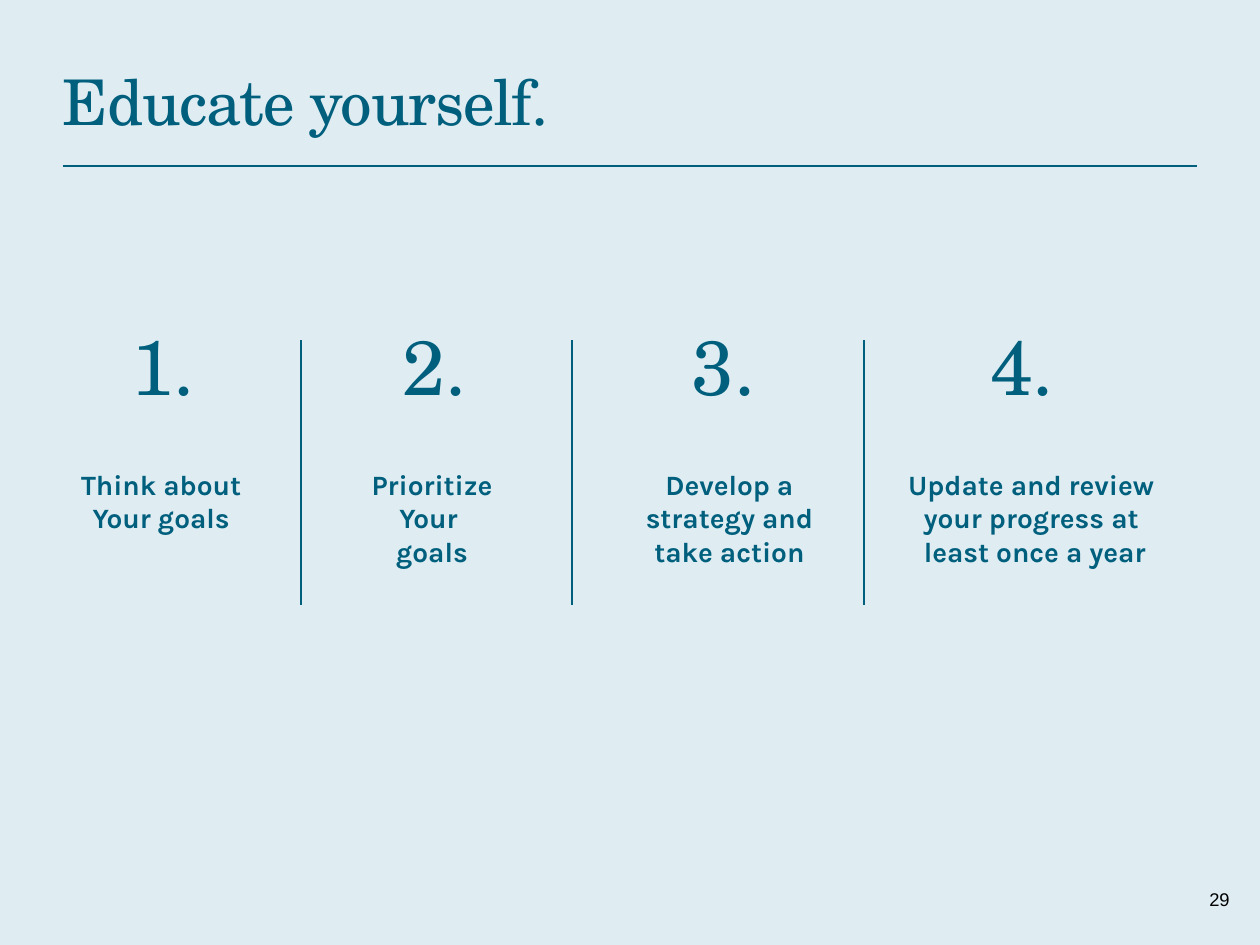
from lxml.etree import SubElement
from pptx import Presentation
from pptx.dml.color import RGBColor
from pptx.enum.shapes import MSO_CONNECTOR, MSO_SHAPE
from pptx.enum.text import MSO_ANCHOR, PP_ALIGN
from pptx.oxml.ns import qn
from pptx.util import Cm, Pt

TEAL = "005F7D"
SERIF, SANS = "TeX Gyre Schola", "Karla"
DEFAULT_INSETS = (0.25, 0.13, 0.25, 0.13)
CAPTION_INSETS = (0.25, 0, 0.25, 0.13)

# number, number left, caption left, caption width, caption paragraphs
# (a vertical tab is a line break inside a paragraph)
STEPS = [
    ("1.", 2.41, 1.27, 3.96, ["Think about", "Your goals"]),
    ("2.", 7.87, 6.73, 3.96, ["Prioritize", "Your ", "goals"]),
    ("3.", 13.69, 12.29, 4.83, ["Develop a strategy and take action"]),
    ("4.", 19.71, 17.15, 7.42,
     ["Update and review \vyour progress at \vleast once a year"]),
]
DIVIDERS = [6.07, 11.53, 17.42]


def rgb(color):
    return RGBColor.from_string(color)


def add_tint(s, width, height, color, alpha):
    sp = s.shapes.add_shape(MSO_SHAPE.RECTANGLE, 0, 0, width, height)
    sp.shadow.inherit = False
    sp.fill.solid()
    sp.fill.fore_color.rgb = rgb(color)
    sp.line.fill.background()
    clr = next(sp.fill._xPr.iter(qn("a:srgbClr")))
    SubElement(clr, qn("a:alpha")).set("val", str(alpha * 1000))


def add_text(s, box, lines, font, size, color=TEAL, bold=False,
             align=PP_ALIGN.LEFT, insets=DEFAULT_INSETS, spacing=None):
    tf = s.shapes.add_textbox(*map(Cm, box)).text_frame
    tf.word_wrap = True
    tf.vertical_anchor = MSO_ANCHOR.TOP
    tf.margin_left, tf.margin_top, tf.margin_right, tf.margin_bottom = map(Cm, insets)
    for i, line in enumerate(lines):
        p = tf.add_paragraph() if i else tf.paragraphs[0]
        p.alignment = align
        for j, part in enumerate(line.split("\v")):
            if j:
                p.add_line_break()
            r = p.add_run()
            r.text = part
            r.font.name = font
            r.font.size = Pt(size)
            r.font.bold = bold
            r.font.color.rgb = rgb(color)
            if spacing is not None:
                r._r.get_or_add_rPr().set("spc", str(round(spacing * 100)))


def add_line(s, x1, y1, x2, y2, width):
    cn = s.shapes.add_connector(MSO_CONNECTOR.STRAIGHT, *map(Cm, (x1, y1, x2, y2)))
    cn.line.color.rgb = rgb(TEAL)
    cn.line.width = Pt(width)
    SubElement(cn._element.spPr, qn("a:effectLst"))


def add_step(s, number, number_left, left, width, lines):
    add_text(s, (number_left, 6.3, 3.78, 2.13), [number], SERIF, 44)
    add_text(s, (left, 9.42, width, 2.18), lines, SANS, 16, bold=True,
             align=PP_ALIGN.CENTER, insets=CAPTION_INSETS)


def main():
    prs = Presentation()
    prs.slide_width, prs.slide_height = Cm(25.4), Cm(19.05)
    s = prs.slides.add_slide(prs.slide_layouts[6])

    # Background tint and page number
    add_tint(s, prs.slide_width, prs.slide_height, "2E87B0", 15)
    add_text(s, (24.13, 17.78, 1.17, 0.71), ["29"], "Arial", 10.5, "000000")

    # Title with rule
    add_text(s, (1.27, 1.27, 19.18, 1.32), ["Educate yourself."], SERIF, 36,
             insets=(0, 0, 0, 0), spacing=-0.7)
    add_line(s, 1.27, 3.35, 24.13, 3.35, 1)

    # Four steps and the dividers between them
    for step in STEPS:
        add_step(s, *step)
    for x in DIVIDERS:
        add_line(s, x, 6.86, x, 12.19, 0.75)

    prs.save("out.pptx")


if __name__ == "__main__":
    main()
